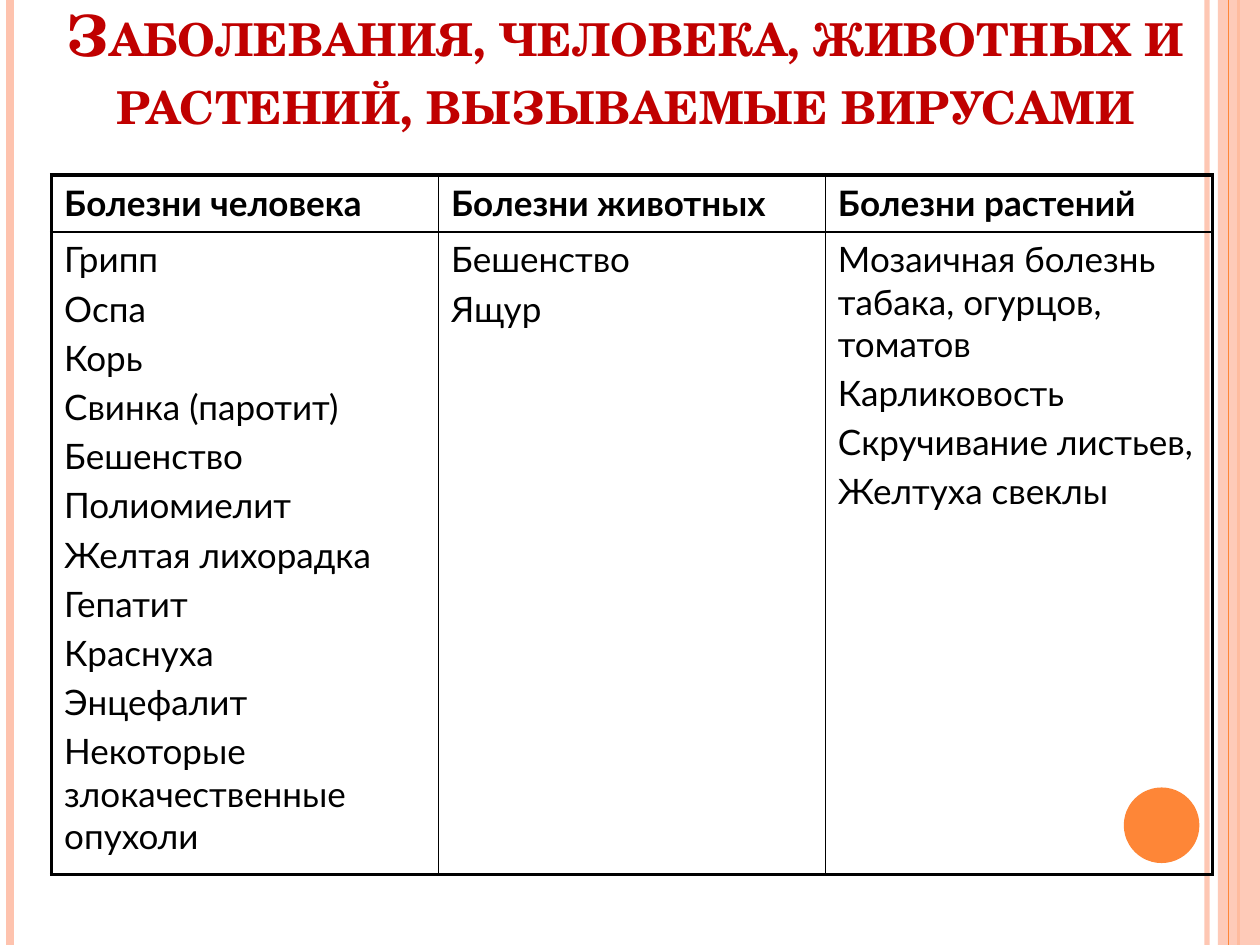
from dataclasses import dataclass

from lxml.etree import SubElement
from pptx import Presentation
from pptx.dml.color import RGBColor
from pptx.enum.shapes import MSO_CONNECTOR, MSO_SHAPE
from pptx.enum.text import MSO_ANCHOR, MSO_AUTO_SIZE, PP_ALIGN
from pptx.oxml.ns import qn
from pptx.util import Pt

WIDTH, HEIGHT = 720, 540


@dataclass(frozen=True)
class Theme:
    orange: RGBColor = RGBColor(0xFE, 0x86, 0x37)
    peach: RGBColor = RGBColor(0xFE, 0xC3, 0xAE)
    red: RGBColor = RGBColor(0xC0, 0x00, 0x00)
    black: RGBColor = RGBColor(0x00, 0x00, 0x00)
    title_font: str = "TeX Gyre Schola"
    body_font: str = "Lato"
    title_size: float = 32.4
    body_size: float = 20
    outer_border: float = 2.25
    inner_border: float = 1


THEME = Theme()

TITLE = "Заболевания, человека, животных и растений, вызываемые вирусами"
DISEASES = {
    "Болезни человека": [
        "Грипп", "Оспа", "Корь", "Свинка (паротит)", "Бешенство",
        "Полиомиелит", "Желтая лихорадка", "Гепатит", "Краснуха",
        "Энцефалит", "Некоторые злокачественные опухоли",
    ],
    "Болезни животных": ["Бешенство", "Ящур"],
    "Болезни растений": [
        "Мозаичная болезнь табака, огурцов, томатов", "Карликовость",
        "Скручивание листьев,", "Желтуха свеклы",
    ],
}


def set_opacity(shape, percent):
    """Make the first colour of the shape partly transparent."""
    color = next(shape._element.spPr.iter(qn("a:srgbClr")))
    SubElement(color, qn("a:alpha"), val=str(percent * 1000))


def add_stripe(slide, x, width, color, opacity=100):
    """Draw a vertical line over the full height of the slide."""
    line = slide.shapes.add_connector(
        MSO_CONNECTOR.STRAIGHT, Pt(x), Pt(0), Pt(x), Pt(HEIGHT))
    line.line.color.rgb = color
    line.line.width = Pt(width)
    SubElement(line._element.spPr, qn("a:effectLst"))
    if opacity < 100:
        set_opacity(line, opacity)


def add_plain_shape(slide, kind, left, top, width, height, color):
    shape = slide.shapes.add_shape(kind, Pt(left), Pt(top), Pt(width), Pt(height))
    shape.shadow.inherit = False
    shape.fill.solid()
    shape.fill.fore_color.rgb = color
    shape.line.fill.background()
    return shape


def add_decoration(slide):
    add_stripe(slide, 689.8, 3, THEME.peach, 93)
    add_stripe(slide, 5.8, 4.5, THEME.peach)
    add_stripe(slide, 707.8, 1.5, THEME.orange)
    band = add_plain_shape(slide, MSO_SHAPE.RECTANGLE, 696, 0, 24, HEIGHT, THEME.peach)
    set_opacity(band, 87)
    add_stripe(slide, 702, 0.75, THEME.orange)
    add_plain_shape(slide, MSO_SHAPE.OVAL, 642.2, 450, 43.2, 43.2, THEME.orange)


def style_font(para, name, size, color, bold):
    font = para.font
    font.name, font.size, font.bold = name, Pt(size), bold
    font.color.rgb = color


def fill_title(slide):
    title = slide.shapes.title
    title.left, title.top, title.width, title.height = Pt(14.4), Pt(26), Pt(686), Pt(55.4)
    frame = title.text_frame
    frame.text = TITLE
    frame.word_wrap = True
    frame.auto_size = MSO_AUTO_SIZE.NONE
    frame.vertical_anchor = MSO_ANCHOR.BOTTOM
    para = frame.paragraphs[0]
    para.alignment = PP_ALIGN.CENTER
    style_font(para, THEME.title_font, THEME.title_size, THEME.red, True)
    para._p.get_or_add_pPr().get_or_add_defRPr().set("cap", "small")


def set_border(cell, side, width):
    border = SubElement(cell._tc.get_or_add_tcPr(), qn(f"a:ln{side}"), w=str(Pt(width)))
    fill = SubElement(border, qn("a:solidFill"))
    SubElement(fill, qn("a:srgbClr"), val=str(THEME.black))


def fill_cell(cell, lines, bold):
    cell.text = "\n".join(lines)
    for index, para in enumerate(cell.text_frame.paragraphs):
        if index:
            para.space_before = Pt(THEME.body_size * 0.2)
        style_font(para, THEME.body_font, THEME.body_size, THEME.black, bold)


def add_disease_table(slide):
    rows = [[[heading] for heading in DISEASES], list(DISEASES.values())]
    column_width, row_heights = 221.1, (32.4, 367.2)
    last_row, last_column = len(rows) - 1, len(DISEASES) - 1
    table = slide.shapes.add_table(
        len(rows), len(DISEASES), Pt(29.5), Pt(100.1),
        Pt(column_width * len(DISEASES)), Pt(sum(row_heights))).table
    table.first_row = table.horz_banding = False
    for column in table.columns:
        column.width = Pt(column_width)
    for r, (height, row) in enumerate(zip(row_heights, rows)):
        table.rows[r].height = Pt(height)
        for c, lines in enumerate(row):
            cell = table.cell(r, c)
            fill_cell(cell, lines, bold=r == 0)
            outer_sides = {"L": c == 0, "R": c == last_column,
                           "T": r == 0, "B": r == last_row}
            for side, outer in outer_sides.items():
                set_border(cell, side, THEME.outer_border if outer else THEME.inner_border)
            cell.fill.background()


def main():
    deck = Presentation()
    deck.slide_width, deck.slide_height = Pt(WIDTH), Pt(HEIGHT)
    slide = deck.slides.add_slide(deck.slide_layouts[5])
    add_decoration(slide)
    fill_title(slide)
    add_disease_table(slide)
    deck.save("out.pptx")


if __name__ == "__main__":
    main()
